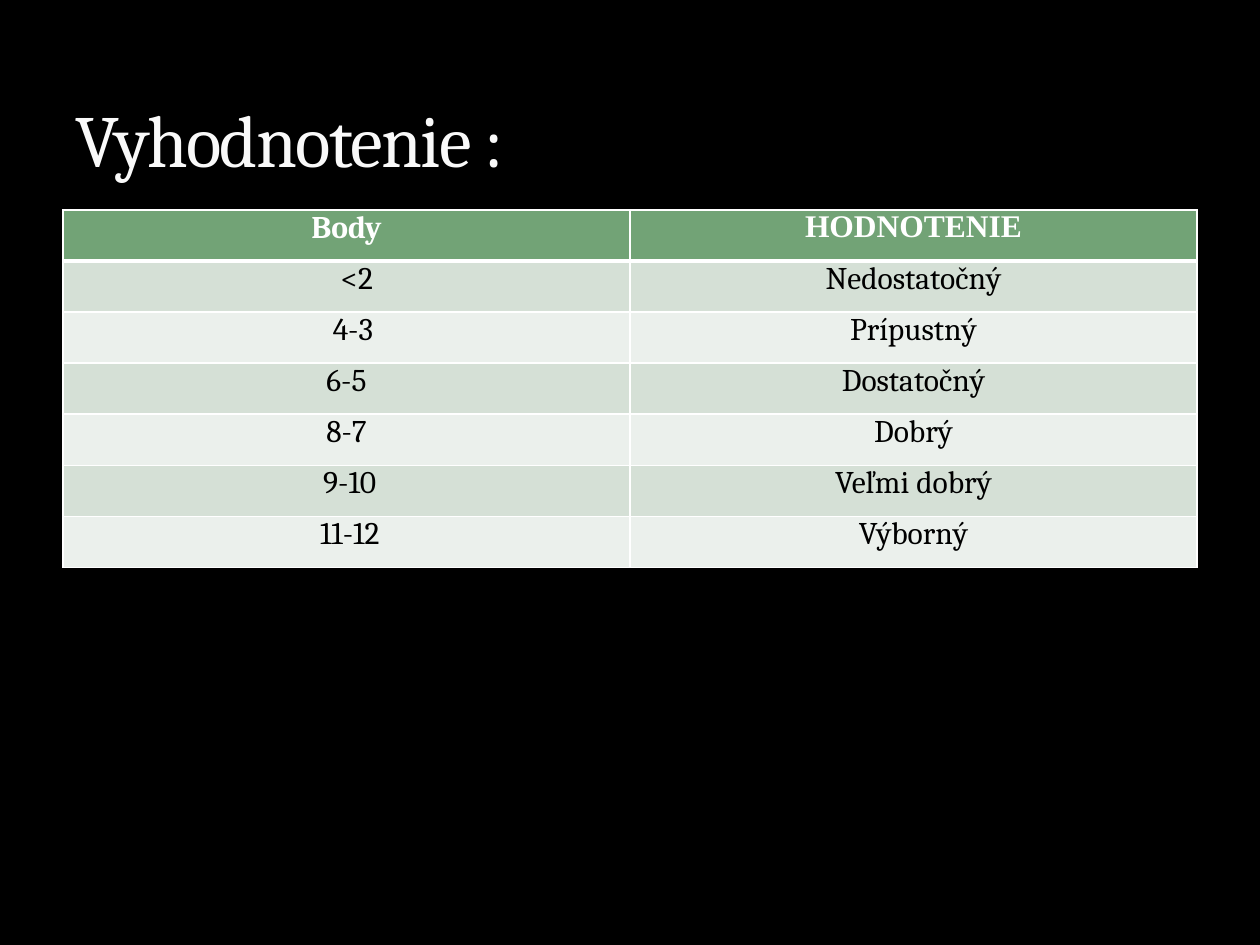
from lxml.etree import SubElement
from pptx import Presentation
from pptx.dml.color import RGBColor
from pptx.enum.text import MSO_ANCHOR, PP_ALIGN
from pptx.oxml import parse_xml
from pptx.oxml.ns import nsdecls, qn
from pptx.util import Cm, Pt

COLORS = {
    "background": "000000",
    "title": "F9F9F9",
    "title_outline": "5B5E4B",
    "header": "72A376",
    "header_text": "FFFFFF",
    "band_dark": "D5E0D6",
    "band_light": "EBF0EC",
    "body_text": "000000",
    "border": "FFFFFF",
}

HEADERS = [("Body", "Cambria"), ("HODNOTENIE", "Times New Roman")]

# points, grade, extra left indent of the points in cm
GRADES = [
    ("<2", "Nedostatočný", 0.42),
    ("4-3", "Prípustný", 0.26),
    ("6-5", "Dostatočný", 0),
    ("8-7", "Dobrý", 0),
    ("9-10", "Veľmi dobrý", 0.13),
    ("11-12", "Výborný", 0.13),
]


def rgb(name):
    return RGBColor.from_string(COLORS[name])


class SlideBuilder:
    font = "Cambria"
    cell_size = 18
    cell_inset = 0.18
    row_height = 1.03

    def __init__(self, prs):
        self.s = prs.slides.add_slide(prs.slide_layouts[5])
        fill = self.s.background.fill
        fill.solid()
        fill.fore_color.rgb = rgb("background")

    def text(self, tf, text, color, align, **font):
        p = tf.paragraphs[0]
        p.alignment = align
        r = p.add_run()
        r.text = text
        for name, value in {"name": self.font, **font}.items():
            setattr(r.font, name, value)
        r.font.color.rgb = rgb(color)
        return r

    def title(self, text, left, top, width, height):
        sp = self.s.shapes.title
        sp.left, sp.top, sp.width, sp.height = map(Cm, (left, top, width, height))
        tf = sp.text_frame
        tf.word_wrap = True
        tf.vertical_anchor = MSO_ANCHOR.BOTTOM
        r = self.text(tf, text, "title", PP_ALIGN.LEFT, size=Pt(42))
        rPr = r._r.get_or_add_rPr()
        rPr.set("spc", "-100")
        rPr.insert(0, parse_xml(
            f'<a:ln {nsdecls("a")} w="3175"><a:solidFill>'
            f'<a:srgbClr val="{COLORS["title_outline"]}"><a:alpha val="25000"/></a:srgbClr>'
            '</a:solidFill></a:ln>'))

    def borders(self, cell, top=1, bottom=1):
        """Draw the four cell borders, with widths in points."""
        tcPr = cell._tc.get_or_add_tcPr()
        for tag, width in {"lnL": 1, "lnR": 1, "lnT": top, "lnB": bottom}.items():
            ln = SubElement(tcPr, qn(f"a:{tag}"), w=str(Pt(width)))
            fill = SubElement(ln, qn("a:solidFill"))
            SubElement(fill, qn("a:srgbClr"), val=COLORS["border"])

    def cell(self, cell, text, fill, color, indent=0, top=1, bottom=1, **font):
        margins = {
            "margin_left": Cm(self.cell_inset + indent),
            "margin_right": Cm(self.cell_inset),
            "margin_top": 0,
            "margin_bottom": 0,
        }
        for name, value in margins.items():
            setattr(cell, name, value)
        self.borders(cell, top, bottom)
        cell.fill.solid()
        cell.fill.fore_color.rgb = rgb(fill)
        self.text(cell.text_frame, text, color, PP_ALIGN.CENTER,
                  size=Pt(self.cell_size), **font)

    def table(self, headers, grades, left, top, width):
        rows = len(grades) + 1
        frame = self.s.shapes.add_table(
            rows, len(headers), Cm(left), Cm(top), Cm(width), Cm(self.row_height * rows))
        table = frame.table
        for row in table.rows:
            row.height = Cm(self.row_height)
        for col, (text, font) in enumerate(headers):
            self.cell(table.cell(0, col), text, "header", "header_text",
                      bottom=3, name=font, bold=True)
        for row, (points, grade, indent) in enumerate(grades, 1):
            band = "band_dark" if row % 2 else "band_light"
            for col, (text, shift) in enumerate([(points, indent), (grade, 0)]):
                self.cell(table.cell(row, col), text, band, "body_text", shift,
                          top=3 if row == 1 else 1, bold=False)


def main():
    prs = Presentation()
    prs.slide_width, prs.slide_height = Cm(25.4), Cm(19.05)
    slide = SlideBuilder(prs)
    slide.table(HEADERS, GRADES, 1.27, 4.23, 22.86)
    slide.title("Vyhodnotenie :", 1.27, 0.43, 22.86, 3.38)
    prs.save("out.pptx")


if __name__ == "__main__":
    main()
